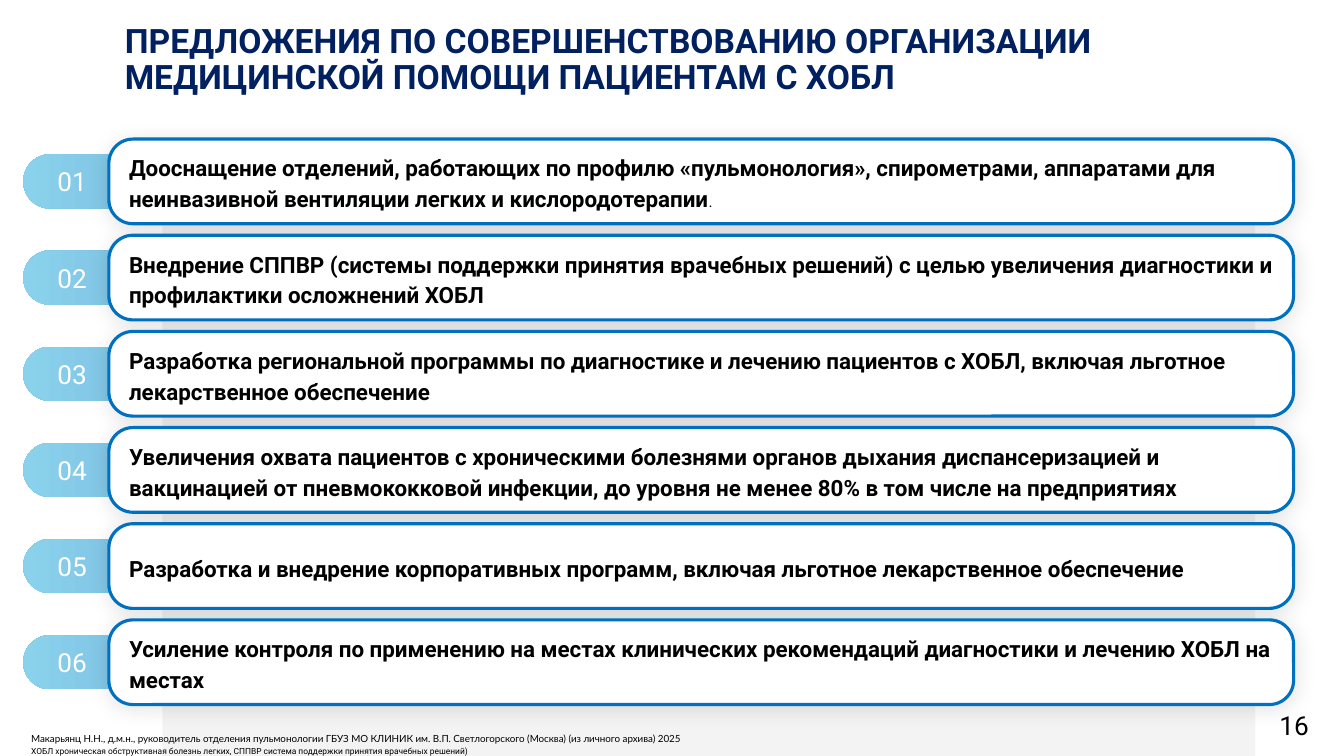
from dataclasses import dataclass

from lxml import etree
from pptx import Presentation
from pptx import util as u
from pptx.dml.color import RGBColor
from pptx.enum import shapes, text
from pptx.oxml import ns

SLIDE_WIDTH, SLIDE_HEIGHT = u.Inches(13.33), u.Inches(7.5)
ROW_PITCH = 12.72


@dataclass(frozen=True)
class Box:
    """Place and size in percent of the slide."""

    left: float
    top: float
    width: float
    height: float

    def lengths(self) -> tuple[int, int, int, int]:
        return (
            int(SLIDE_WIDTH * self.left / 100),
            int(SLIDE_HEIGHT * self.top / 100),
            int(SLIDE_WIDTH * self.width / 100),
            int(SLIDE_HEIGHT * self.height / 100),
        )

    def row(self, index: int) -> "Box":
        return Box(self.left, self.top + index * ROW_PITCH, self.width, self.height)


@dataclass(frozen=True)
class Passage:
    wording: str
    size: float
    colour: str = "000000"
    bold: bool = False
    spacing: float = 1.0
    font: str = "Roboto"


@dataclass(frozen=True)
class Proposal:
    wording: str
    ending: str = ""


PANEL = Box(12.08, 22, 81.32, 78)
FIRST_TAB = Box(1.73, 20.4, 23.25, 7.2)
FIRST_CARD = Box(8.1, 18.4, 88.15, 11.2)
TITLE = Box(8.55, 1.73, 77.27, 12.53)
PAGE_NUMBER = Box(94.45, 93.2, 5.63, 5.33)
FOOTNOTE = Box(1.58, 96.13, 76.97, 5.2)

PROPOSALS = [
    Proposal(
        "Дооснащение отделений, работающих по профилю «пульмонология», спирометрами, "
        "аппаратами для неинвазивной вентиляции легких и кислородотерапии",
        ".",
    ),
    Proposal(
        "Внедрение СППВР (системы поддержки принятия врачебных решений) с целью "
        "увеличения диагностики и профилактики осложнений ХОБЛ"
    ),
    Proposal(
        "Разработка региональной программы по диагностике и лечению пациентов с ХОБЛ, "
        "включая льготное лекарственное обеспечение"
    ),
    Proposal(
        "Увеличения охвата пациентов с хроническими болезнями органов дыхания "
        "диспансеризацией и вакцинацией от пневмококковой инфекции, до уровня не менее "
        "80% в том числе на предприятиях"
    ),
    Proposal("Разработка и внедрение корпоративных программ, включая льготное лекарственное обеспечение"),
    Proposal(
        "Усиление контроля по применению на местах клинических рекомендаций "
        "диагностики и лечению ХОБЛ на местах"
    ),
]


def colour(value: str) -> RGBColor:
    return RGBColor.from_string(value)


def write(shape, passages: list[Passage], margins: tuple[float, float, float, float], middle: bool = False) -> None:
    frame = shape.text_frame
    frame.word_wrap = True
    frame.vertical_anchor = text.MSO_ANCHOR.MIDDLE if middle else text.MSO_ANCHOR.TOP
    frame.margin_left, frame.margin_top, frame.margin_right, frame.margin_bottom = map(u.Inches, margins)
    frame.text = "\n".join(passage.wording for passage in passages)
    for paragraph, passage in zip(frame.paragraphs, passages):
        paragraph.alignment = text.PP_ALIGN.LEFT
        paragraph.line_spacing = passage.spacing
        for run in paragraph.runs:
            style_run(run, passage)


def style_run(run, passage: Passage) -> None:
    run.font.name = passage.font
    run.font.size = u.Pt(passage.size)
    run.font.bold = passage.bold
    run.font.color.rgb = colour(passage.colour)


def add_panel(slide, box: Box, fill: str, kind=shapes.MSO_SHAPE.RECTANGLE):
    shape = slide.shapes.add_shape(kind, *box.lengths())
    shape.shadow.inherit = False
    shape.fill.solid()
    shape.fill.fore_color.rgb = colour(fill)
    shape.line.fill.background()
    return shape


def add_tab(slide, index: int) -> None:
    tab = add_panel(slide, FIRST_TAB.row(index), "8AD2EB", shapes.MSO_SHAPE.ROUNDED_RECTANGLE)
    tab.adjustments[0] = 0.5
    tab.fill.gradient()
    tab.fill.gradient_angle = 180
    for stop, value in zip(tab.fill.gradient_stops, ("6AA3DA", "8AD2EB")):
        stop.color.rgb = colour(value)
    write(tab, [Passage(f"{index + 1:02}", 18.7, "FFFFFF")], (0.26, 0, 0, 0), middle=True)


def add_soft_shadow(shape) -> None:
    effects = shape._element.spPr.find(ns.qn("a:effectLst"))
    shadow = etree.SubElement(
        effects,
        ns.qn("a:outerShdw"),
        blurRad=str(u.Pt(14.6)),
        dist=str(u.Pt(1.5)),
        dir="5400000",
        algn="t",
        rotWithShape="0",
    )
    shade = etree.SubElement(shadow, ns.qn("a:srgbClr"), val="000000")
    etree.SubElement(shade, ns.qn("a:alpha"), val="11000")


def add_card(slide, index: int, proposal: Proposal) -> None:
    card = add_panel(slide, FIRST_CARD.row(index), "FFFFFF", shapes.MSO_SHAPE.ROUNDED_RECTANGLE)
    card.adjustments[0] = 0.285
    card.line.color.rgb = colour("0070C0")
    card.line.width = u.Pt(2.25)
    add_soft_shadow(card)
    write(card, [Passage(proposal.wording, 16, bold=True, spacing=1.15)], (0.13,) * 4, middle=True)
    if proposal.ending:
        run = card.text_frame.paragraphs[0].add_run()
        run.text = proposal.ending
        style_run(run, Passage(proposal.ending, 11))


def add_label(
    slide,
    box: Box,
    passages: list[Passage],
    margins: tuple[float, float, float, float] = (0.1, 0.05, 0.1, 0.05),
    middle: bool = False,
) -> None:
    write(slide.shapes.add_textbox(*box.lengths()), passages, margins, middle)


def main() -> None:
    presentation = Presentation()
    presentation.slide_width, presentation.slide_height = SLIDE_WIDTH, SLIDE_HEIGHT
    slide = presentation.slides.add_slide(presentation.slide_layouts[6])
    add_panel(slide, PANEL, "F3F3F3")
    title = "ПРЕДЛОЖЕНИЯ ПО СОВЕРШЕНСТВОВАНИЮ ОРГАНИЗАЦИИ МЕДИЦИНСКОЙ ПОМОЩИ ПАЦИЕНТАМ С ХОБЛ"
    add_label(slide, TITLE, [Passage(title, 24, "002060", True, 0.9)], middle=True)
    for index, proposal in enumerate(PROPOSALS):
        add_tab(slide, index)
        add_card(slide, index, proposal)
    add_label(slide, PAGE_NUMBER, [Passage("16", 18.7)])
    author = (
        "Макарьянц Н.Н., д.м.н., руководитель отделения пульмонологии "
        "ГБУЗ МО КЛИНИК им. В.П. Светлогорского (Москва) (из личного архива) 2025"
    )
    abbreviations = (
        "ХОБЛ хроническая обструктивная болезнь легких, "
        "СППВР система поддержки принятия врачебных решений)"
    )
    footnotes = [Passage(author, 7, spacing=1.15, font="Lato"), Passage(abbreviations, 6, spacing=1.15)]
    add_label(slide, FOOTNOTE, footnotes, (0.1, 0.04, 0.1, 0.1))
    presentation.save("out.pptx")


if __name__ == "__main__":
    main()
